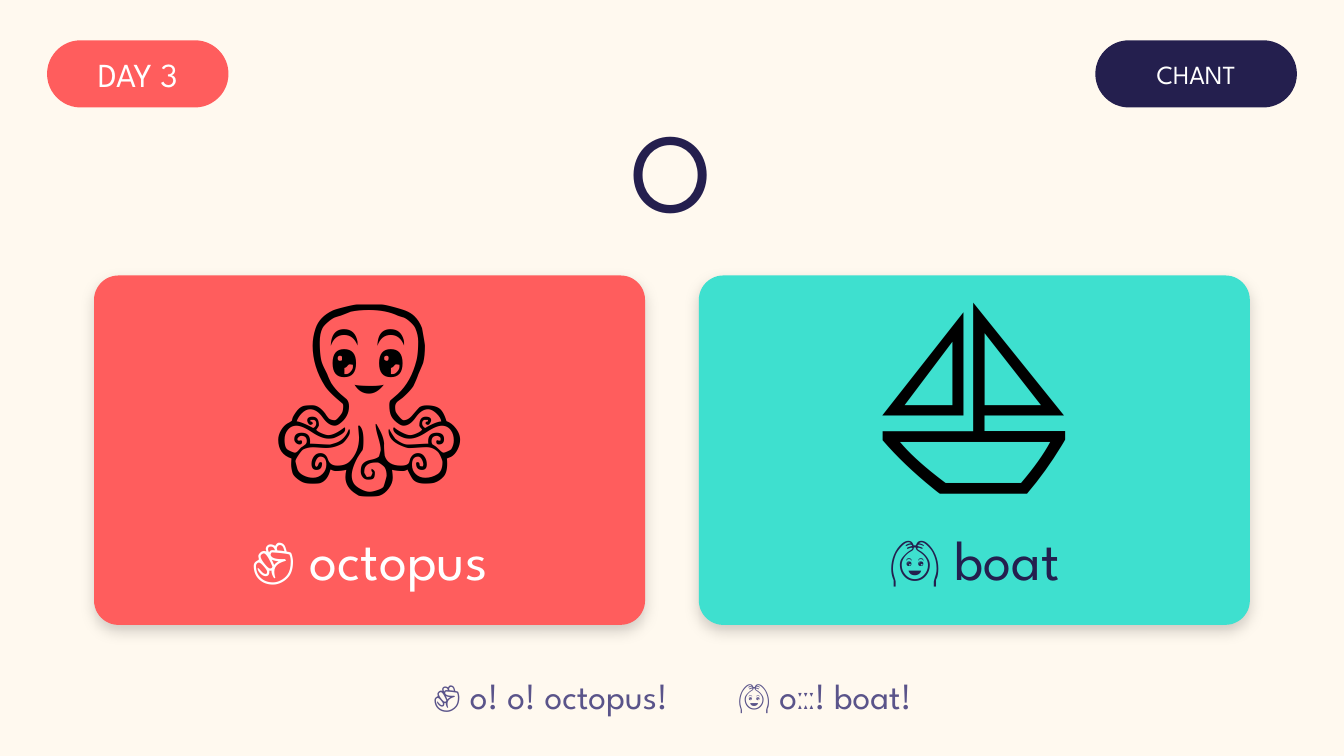
"""Build the phonics chant slide for the letter O."""
from dataclasses import dataclass

from lxml import etree
from pptx import Presentation
from pptx.dml.color import RGBColor
from pptx.enum.shapes import MSO_SHAPE
from pptx.enum.text import MSO_ANCHOR, MSO_AUTO_SIZE, PP_ALIGN
from pptx.oxml.ns import qn
from pptx.shapes.autoshape import Shape
from pptx.slide import Slide
from pptx.text.text import TextFrame
from pptx.util import Pt

ROUNDED = MSO_SHAPE.ROUNDED_RECTANGLE
TOP, MIDDLE = MSO_ANCHOR.TOP, MSO_ANCHOR.MIDDLE
LEFT, CENTER = PP_ALIGN.LEFT, PP_ALIGN.CENTER
NO_AUTOFIT = MSO_AUTO_SIZE.NONE
TITLE_ONLY = 5
SLIDE_WIDTH, SLIDE_HEIGHT = 720, 405


@dataclass(frozen=True)
class Theme:
    """Colours, fonts and type sizes."""
    cream: str = "FFF9EF"
    coral: str = "FF5D5D"
    navy: str = "241F4E"
    teal: str = "3EE0CF"
    purple: str = "5A548A"
    white: str = "FFFFFF"
    black: str = "000000"
    font: str = "League Spartan"
    icon_font: str = "Calibri"
    letter: int = 60
    icon: int = 110
    word: int = 30
    chant: int = 19
    day: int = 18
    activity: int = 14


@dataclass(frozen=True)
class Box:
    """A rectangle in points."""
    left: float
    top: float
    width: float
    height: float

    def lengths(self) -> tuple[Pt, Pt, Pt, Pt]:
        """Return the four lengths for a shape."""
        return Pt(self.left), Pt(self.top), Pt(self.width), Pt(self.height)


@dataclass(frozen=True)
class Pill:
    """A label at the top of the slide."""
    text: str
    left: float
    width: float
    size: int
    fill: str


@dataclass(frozen=True)
class Card:
    """A word with its picture symbol."""
    icon: str
    word: str
    fill: str
    color: str


THEME = Theme()
PILLS = (
    Pill("DAY 3", 25.2, 97.2, THEME.day, THEME.coral),
    Pill("CHANT", 586.8, 108, THEME.activity, THEME.navy),
)
CARDS = (
    Card("🐙", "✊ octopus", THEME.coral, THEME.white),
    Card("⛵", "🙆 boat", THEME.teal, THEME.navy),
)
CARD_LEFT, CARD_WIDTH, CARD_STEP = 50.4, 295.2, 324
CHANT_INSET, CHANT_TAB = 232, 163.4


def write_text(frame: TextFrame, text: str, *, size: int, color: str, font: str = THEME.font,
               anchor: MSO_ANCHOR = MIDDLE, align: PP_ALIGN = CENTER, tab: float | None = None) -> None:
    """Write one formatted paragraph into a text frame."""
    frame.word_wrap = True
    frame.auto_size = NO_AUTOFIT
    frame.vertical_anchor = anchor
    paragraph = frame.paragraphs[0]
    paragraph.alignment = align
    if tab is not None:
        tabs = etree.SubElement(paragraph._p.get_or_add_pPr(), qn("a:tabLst"))
        etree.SubElement(tabs, qn("a:tab"), pos=str(Pt(tab)), algn="l")
    run = paragraph.add_run()
    run.text = text
    run.font.size = Pt(size)
    run.font.name = font
    run.font.color.rgb = RGBColor.from_string(color)


def add_panel(slide: Slide, box: Box, fill: str, rounding: float) -> Shape:
    """Add a filled rounded rectangle without a line or shadow."""
    shape = slide.shapes.add_shape(ROUNDED, *box.lengths())
    shape.adjustments[0] = rounding
    shape.fill.solid()
    shape.fill.fore_color.rgb = RGBColor.from_string(fill)
    shape.line.fill.background()
    shape.shadow.inherit = False
    return shape


def add_shadow(shape: Shape) -> None:
    """Give a shape a soft shadow below it."""
    effects = shape._element.spPr.find(qn("a:effectLst"))
    shadow = etree.SubElement(effects, qn("a:outerShdw"), blurRad=str(Pt(8)), dist=str(Pt(3)),
                              dir="5400000", algn="ctr", rotWithShape="0")
    color = etree.SubElement(shadow, qn("a:srgbClr"), val=THEME.black)
    etree.SubElement(color, qn("a:alpha"), val="18000")


def add_pill(slide: Slide, pill: Pill) -> None:
    """Draw a label with fully rounded ends."""
    shape = add_panel(slide, Box(pill.left, 21.6, pill.width, 36), pill.fill, 0.5)
    frame = shape.text_frame
    frame.margin_left = frame.margin_right = frame.margin_top = frame.margin_bottom = 0
    write_text(frame, pill.text, size=pill.size, color=THEME.white)


def add_text_box(slide: Slide, box: Box) -> TextFrame:
    """Add an empty text box and return its frame."""
    return slide.shapes.add_textbox(*box.lengths()).text_frame


def add_card(slide: Slide, card: Card, left: float) -> None:
    """Draw a card with its symbol and word."""
    add_shadow(add_panel(slide, Box(left, 147.6, CARD_WIDTH, 187.2), card.fill, 0.07))
    write_text(add_text_box(slide, Box(left, 133.2, CARD_WIDTH, 122.4)), card.icon,
               size=THEME.icon, color=THEME.black, font=THEME.icon_font, anchor=TOP)
    write_text(add_text_box(slide, Box(left, 277.2, CARD_WIDTH, 43.2)), card.word,
               size=THEME.word, color=card.color)


def add_letter(slide: Slide) -> None:
    """Put the letter into the title placeholder."""
    title = slide.shapes.title
    title.left, title.top, title.width, title.height = Box(0, 57.6, SLIDE_WIDTH, 64.8).lengths()
    write_text(title.text_frame, "O", size=THEME.letter, color=THEME.navy)


def add_chant(slide: Slide) -> None:
    """Write both chants on one line, parted by a tab."""
    frame = add_text_box(slide, Box(0, 356.4, SLIDE_WIDTH, 32.4))
    frame.margin_left = Pt(CHANT_INSET)
    write_text(frame, "✊ o! o! octopus!\t🙆 oːːː! boat!", size=THEME.chant,
               color=THEME.purple, align=LEFT, tab=CHANT_TAB)


def main() -> None:
    """Build and save the presentation."""
    presentation = Presentation()
    presentation.slide_width, presentation.slide_height = Pt(SLIDE_WIDTH), Pt(SLIDE_HEIGHT)
    slide = presentation.slides.add_slide(presentation.slide_layouts[TITLE_ONLY])
    slide.background.fill.solid()
    slide.background.fill.fore_color.rgb = RGBColor.from_string(THEME.cream)
    add_letter(slide)
    for pill in PILLS:
        add_pill(slide, pill)
    for index, card in enumerate(CARDS):
        add_card(slide, card, CARD_LEFT + index * CARD_STEP)
    add_chant(slide)
    presentation.save("out.pptx")


if __name__ == "__main__":
    main()
